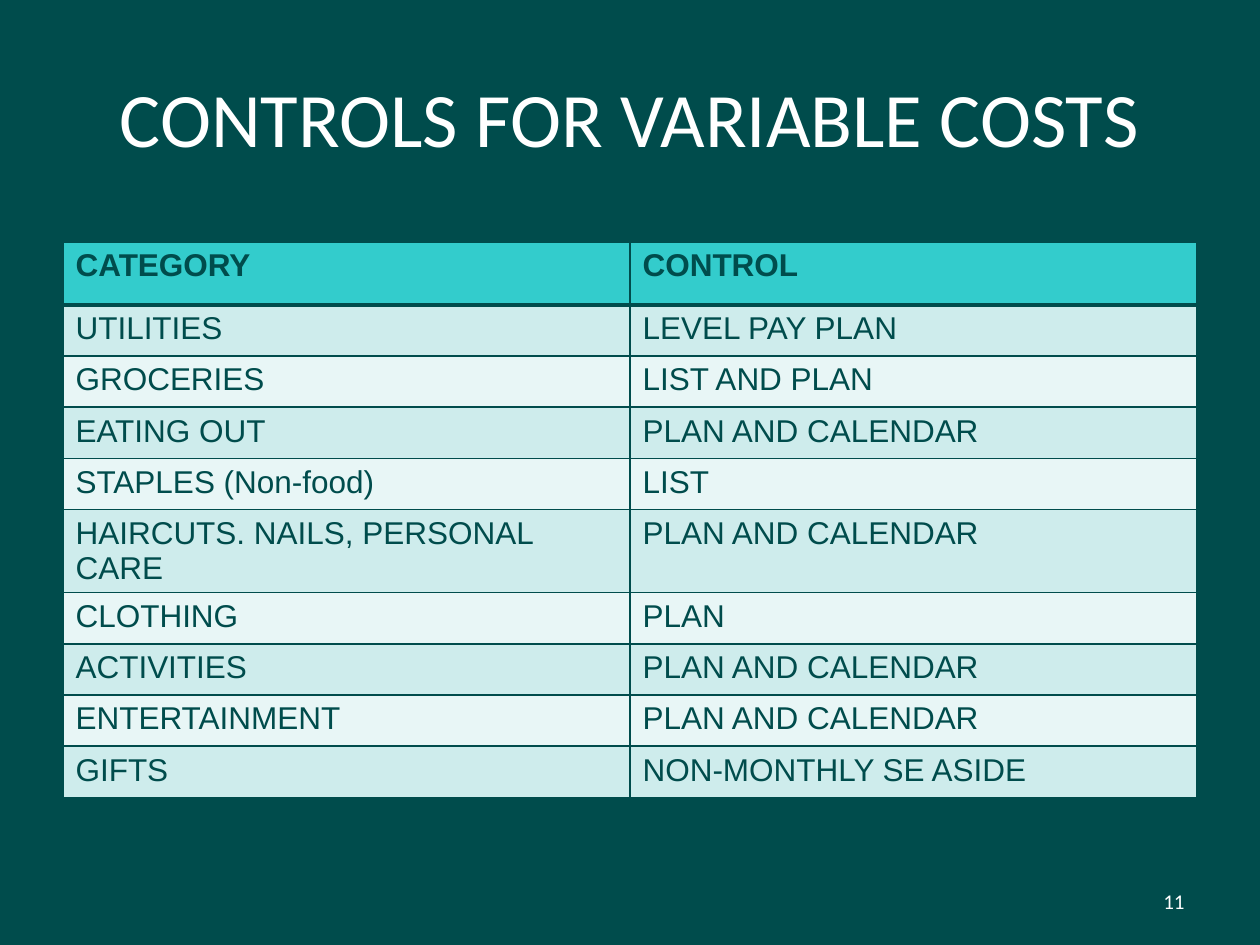
from lxml import etree
from pptx import Presentation
from pptx.dml.color import RGBColor
from pptx.enum.text import MSO_ANCHOR, PP_ALIGN
from pptx.oxml.ns import qn
from pptx.util import Inches, Pt

MIDDLE = MSO_ANCHOR.MIDDLE
CENTER, LEFT, RIGHT = PP_ALIGN.CENTER, PP_ALIGN.LEFT, PP_ALIGN.RIGHT

TITLE = "CONTROLS FOR VARIABLE COSTS"
PAGE_NUMBER = "11"
ROWS = [
    ("CATEGORY", "CONTROL"),
    ("UTILITIES", "LEVEL PAY PLAN"),
    ("GROCERIES", "LIST AND PLAN"),
    ("EATING OUT", "PLAN AND CALENDAR"),
    ("STAPLES (Non-food)", "LIST"),
    ("HAIRCUTS. NAILS, PERSONAL CARE", "PLAN AND CALENDAR"),
    ("CLOTHING", "PLAN"),
    ("ACTIVITIES", "PLAN AND CALENDAR"),
    ("ENTERTAINMENT", "PLAN AND CALENDAR"),
    ("GIFTS", "NON-MONTHLY SE ASIDE"),
]
DARK, WHITE, HEADER = "004C4C", "FFFFFF", "33CCCC"
BANDS = ("E8F6F6", "CEECEC")

WIDTH, HEIGHT, MARGIN = 10, 7.5, 0.5
CONTENT_WIDTH = WIDTH - 2 * MARGIN
TABLE_TOP, HEADER_HEIGHT, ROW_HEIGHT = 1.92, 0.5, 0.406


def color(value):
    return RGBColor.from_string(value)


def write(frame, text, size, font, ink, align, bold=False):
    para = frame.paragraphs[0]
    para.alignment = align
    span = para.add_run()
    span.text = text
    span.font.size, span.font.name, span.font.bold = Pt(size), font, bold
    span.font.color.rgb = color(ink)


def place(box, left, top, width, height):
    box.left, box.top = Inches(left), Inches(top)
    box.width, box.height = Inches(width), Inches(height)


def set_borders(cell, top, bottom):
    """Draw all four sides; must run before the fill, which follows them in the XML."""
    properties = cell._tc.get_or_add_tcPr()
    for side, points in (("L", 1), ("R", 1), ("T", top), ("B", bottom)):
        line = etree.SubElement(properties, qn(f"a:ln{side}"), w=str(Pt(points)))
        fill = etree.SubElement(line, qn("a:solidFill"))
        etree.SubElement(fill, qn("a:srgbClr"), val=DARK)


def add_cost_table(page):
    height = HEADER_HEIGHT + ROW_HEIGHT * (len(ROWS) - 1)
    table = page.shapes.add_table(
        len(ROWS), len(ROWS[0]), Inches(MARGIN), Inches(TABLE_TOP),
        Inches(CONTENT_WIDTH), Inches(height)).table
    for index, texts in enumerate(ROWS):
        is_header = index == 0
        table.rows[index].height = Inches(HEADER_HEIGHT if is_header else ROW_HEIGHT)
        for column, text in enumerate(texts):
            cell = table.cell(index, column)
            set_borders(cell, top=3 if index == 1 else 1, bottom=3 if is_header else 1)
            cell.fill.solid()
            cell.fill.fore_color.rgb = color(HEADER if is_header else BANDS[index % 2])
            write(cell.text_frame, text, 18, "Arial", DARK, LEFT, is_header)


def main():
    deck = Presentation()
    deck.slide_width, deck.slide_height = Inches(WIDTH), Inches(HEIGHT)
    page = deck.slides.add_slide(deck.slide_layouts.get_by_name("Title Only"))
    page.background.fill.solid()
    page.background.fill.fore_color.rgb = color(DARK)

    title = page.shapes.title
    place(title, MARGIN, 0.3, CONTENT_WIDTH, 1.25)
    title.text_frame.vertical_anchor = MIDDLE
    write(title.text_frame, TITLE, 44, "Calibri", WHITE, CENTER)

    add_cost_table(page)

    number = page.shapes.add_textbox(0, 0, 0, 0)
    place(number, WIDTH - MARGIN - 2.33, 6.95, 2.33, 0.4)
    number.text_frame.word_wrap = True
    number.text_frame.vertical_anchor = MIDDLE
    write(number.text_frame, PAGE_NUMBER, 12, "Calibri", WHITE, RIGHT)

    deck.save("out.pptx")


if __name__ == "__main__":
    main()
